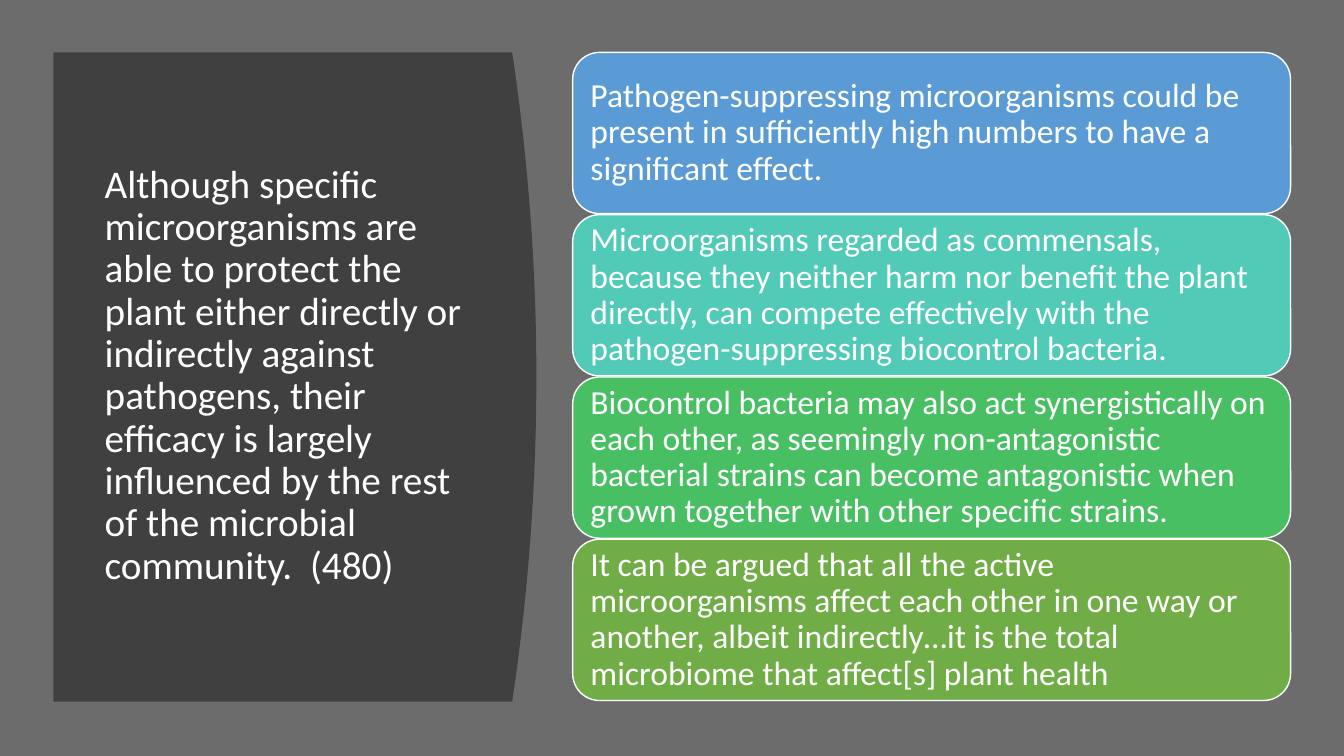
from dataclasses import dataclass

from pptx import Presentation
from pptx.dml.color import RGBColor
from pptx.enum import shapes, text
from pptx.slide import Slide
from pptx.text.text import TextFrame
from pptx.util import Inches, Pt


@dataclass(frozen=True)
class Theme:
    font: str = "Calibri"
    background: str = "6C6C6C"
    panel: str = "404040"
    white: str = "FFFFFF"
    claim_size: int = 28
    point_size: int = 24
    line_spacing: float = 0.9


@dataclass(frozen=True)
class Point:
    wording: str
    color: str


THEME = Theme()

CLAIM = (
    "Although specific microorganisms are able to protect the plant either "
    "directly or indirectly against pathogens, their efficacy is largely "
    "influenced by the rest of the microbial community.  (480)"
)

POINTS = [
    Point("Pathogen-suppressing microorganisms could be present in sufficiently "
          "high numbers to have a significant effect.", "5B9BD5"),
    Point("Microorganisms regarded as commensals, because they neither harm nor "
          "benefit the plant directly, can compete effectively with the "
          "pathogen-suppressing biocontrol bacteria.", "52CAB8"),
    Point("Biocontrol bacteria may also act synergistically on each other, as "
          "seemingly non-antagonistic bacterial strains can become antagonistic "
          "when grown together with other specific strains.", "49BF64"),
    Point("It can be argued that all the active microorganisms affect each other "
          "in one way or another, albeit indirectly…it is the total microbiome "
          "that affect[s] plant health", "70AD47"),
]

TOP, BOTTOM = 0.52, 6.96
PANEL_LEFT, PANEL_CORNER, PANEL_BULGE = 0.53, 5.08, 0.24
CURVE_STEPS = 40
CARD_LEFT, CARD_WIDTH, CARD_HEIGHT, CARD_PITCH = 5.68, 7.12, 1.6, 1.61


def write(frame: TextFrame, wording: str, size: int) -> None:
    frame.word_wrap = True
    frame.vertical_anchor = text.MSO_ANCHOR.MIDDLE
    frame.text = wording
    paragraph = frame.paragraphs[0]
    paragraph.alignment = text.PP_ALIGN.LEFT
    paragraph.line_spacing = THEME.line_spacing
    font = paragraph.runs[0].font
    font.name = THEME.font
    font.size = Pt(size)
    font.color.rgb = RGBColor.from_string(THEME.white)


def draw_panel(slide: Slide) -> None:
    """Draw the dark panel, whose right edge bulges as a parabola."""
    edge = []
    for step in range(CURVE_STEPS + 1):
        share = step / CURVE_STEPS
        x = PANEL_CORNER + PANEL_BULGE * 4 * share * (1 - share)
        edge.append((Inches(x), Inches(TOP + (BOTTOM - TOP) * share)))
    outline = slide.shapes.build_freeform(Inches(PANEL_LEFT), Inches(TOP))
    outline.add_line_segments(edge + [(Inches(PANEL_LEFT), Inches(BOTTOM))])
    panel = outline.convert_to_shape()
    panel.shadow.inherit = False
    panel.fill.solid()
    panel.fill.fore_color.rgb = RGBColor.from_string(THEME.panel)
    panel.line.fill.background()


def draw_claim(slide: Slide) -> None:
    claim = slide.shapes.add_textbox(
        Inches(0.94), Inches(1.11), Inches(4.01), Inches(5.24))
    write(claim.text_frame, CLAIM, THEME.claim_size)


def draw_point(slide: Slide, point: Point, top: float) -> None:
    card = slide.shapes.add_shape(
        shapes.MSO_SHAPE.ROUNDED_RECTANGLE, Inches(CARD_LEFT), Inches(top),
        Inches(CARD_WIDTH), Inches(CARD_HEIGHT))
    card.shadow.inherit = False
    card.fill.solid()
    card.fill.fore_color.rgb = RGBColor.from_string(point.color)
    card.line.color.rgb = RGBColor.from_string(THEME.white)
    card.line.width = Pt(1)
    frame = card.text_frame
    frame.margin_left = frame.margin_right = Inches(0.1)
    frame.margin_top = frame.margin_bottom = Inches(0.1)
    write(frame, point.wording, THEME.point_size)


def main() -> None:
    deck = Presentation()
    deck.slide_width, deck.slide_height = Inches(13.33), Inches(7.5)
    slide = deck.slides.add_slide(deck.slide_layouts[6])
    slide.background.fill.solid()
    slide.background.fill.fore_color.rgb = RGBColor.from_string(THEME.background)
    draw_panel(slide)
    draw_claim(slide)
    for row, point in enumerate(POINTS):
        draw_point(slide, point, TOP + row * CARD_PITCH)
    deck.save("out.pptx")


if __name__ == "__main__":
    main()
